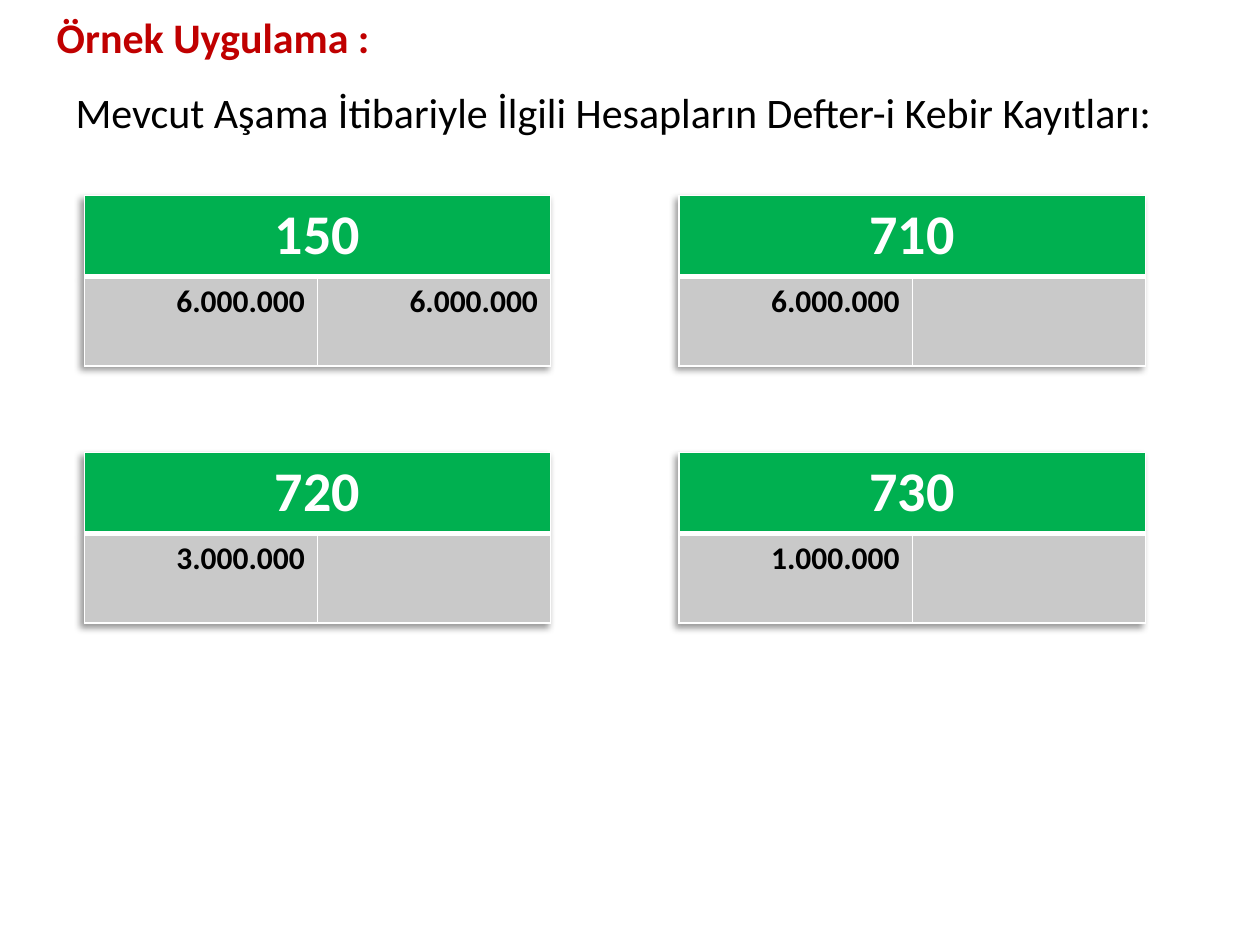
from dataclasses import dataclass

from lxml import etree
from pptx import Presentation
from pptx import util as u
from pptx.dml.color import RGBColor
from pptx.enum import text
from pptx.oxml import parse_xml
from pptx.oxml.ns import nsdecls, qn


@dataclass(frozen=True)
class Theme:
    font: str = "Calibri"
    red: str = "C00000"
    black: str = "000000"
    white: str = "FFFFFF"
    green: str = "00B050"
    grey: str = "C9C9C9"
    heading: int = 24
    account: int = 32
    amount: int = 18
    thin: int = 1
    thick: int = 3


class LedgerSlide:
    """Holds the theme and the page that the elements are added to."""

    def __init__(self, page, theme):
        self.page = page
        self.theme = theme

    def format_text(self, para, size, color, bold=False):
        for span in para.runs:
            span.font.name = self.theme.font
            span.font.size = u.Pt(size)
            span.font.bold = bold
            span.font.color.rgb = RGBColor.from_string(color)

    def heading(self, box, place, wording, color, bold, anchor):
        box.left, box.top, box.width, box.height = map(u.Inches, place)
        frame = box.text_frame
        frame.text = wording
        frame.auto_size = text.MSO_AUTO_SIZE.NONE
        frame.vertical_anchor = anchor
        para = frame.paragraphs[0]
        para.alignment = text.PP_ALIGN.LEFT
        para.line_spacing = 0.9
        self.format_text(para, self.theme.heading, color, bold)
        return para

    def title(self, place, wording):
        self.heading(self.page.shapes.title, place, wording, self.theme.red,
                     True, text.MSO_ANCHOR.MIDDLE)

    def body(self, place, wording):
        para = self.heading(self.page.placeholders[1], place, wording,
                            self.theme.black, False, text.MSO_ANCHOR.TOP)
        para.space_before = u.Pt(7.5)
        properties = para._p.get_or_add_pPr()
        properties.set("marL", "0")
        properties.set("indent", "0")
        etree.SubElement(properties, qn("a:buNone"))

    def borders(self, cell, **widths):
        """Draw white borders; widths are points for the sides L, R, T and B."""
        properties = cell._tc.get_or_add_tcPr()
        for index, side in enumerate("LRTB"):
            width = u.Pt(widths.get(side, self.theme.thin))
            properties.insert(index, parse_xml(
                f'<a:ln{side} {nsdecls("a")} w="{width}"><a:solidFill>'
                f'<a:srgbClr val="{self.theme.white}"/></a:solidFill></a:ln{side}>'))

    def cell(self, cell, wording, size, color, fill, alignment, **widths):
        cell.text = wording
        cell.fill.solid()
        cell.fill.fore_color.rgb = RGBColor.from_string(fill)
        self.borders(cell, **widths)
        para = cell.text_frame.paragraphs[0]
        para.alignment = alignment
        self.format_text(para, size, color, True)

    def table_shadow(self, table):
        table._tbl.tblPr.insert(0, parse_xml(
            f'<a:effectLst {nsdecls("a")}><a:outerShdw blurRad="50800" dist="38100" '
            'dir="8100000" algn="tr" rotWithShape="0"><a:srgbClr val="000000">'
            '<a:alpha val="40000"/></a:srgbClr></a:outerShdw></a:effectLst>'))

    def account(self, left, top, code, debit, credit):
        """Add a T-account: its code above the debit and credit amounts."""
        theme = self.theme
        table = self.page.shapes.add_table(
            2, 2, u.Inches(left), u.Inches(top), u.Inches(3.7), u.Inches(1.35)).table
        table.first_row = table.horz_banding = False
        table.rows[0].height = u.Inches(0.64)
        table.rows[1].height = u.Inches(0.71)
        self.table_shadow(table)
        for column, amount in enumerate((debit, credit)):
            self.cell(table.cell(0, column), "" if column else code, theme.account,
                      theme.white, theme.green, text.PP_ALIGN.CENTER, B=theme.thick)
            self.cell(table.cell(1, column), amount, theme.amount, theme.black,
                      theme.grey, text.PP_ALIGN.RIGHT, T=theme.thick)
        table.cell(0, 0).merge(table.cell(0, 1))


def main():
    deck = Presentation()
    deck.slide_width, deck.slide_height = u.Inches(10), u.Inches(7.5)
    ledger = LedgerSlide(deck.slides.add_slide(deck.slide_layouts[1]), Theme())
    ledger.title((0.35, 0.13, 9, 0.38), "Örnek Uygulama :")
    ledger.body((0.5, 0.68, 9, 0.71),
                "Mevcut Aşama İtibariyle İlgili Hesapların Defter-i Kebir Kayıtları:")
    accounts = [
        ("150", "6.000.000", "6.000.000"),
        ("710", "6.000.000", ""),
        ("720", "3.000.000", ""),
        ("730", "1.000.000", ""),
    ]
    for index, entry in enumerate(accounts):
        row, column = divmod(index, 2)
        ledger.account(0.67 + 4.72 * column, 1.55 + 2.04 * row, *entry)
    deck.save("out.pptx")


if __name__ == "__main__":
    main()
